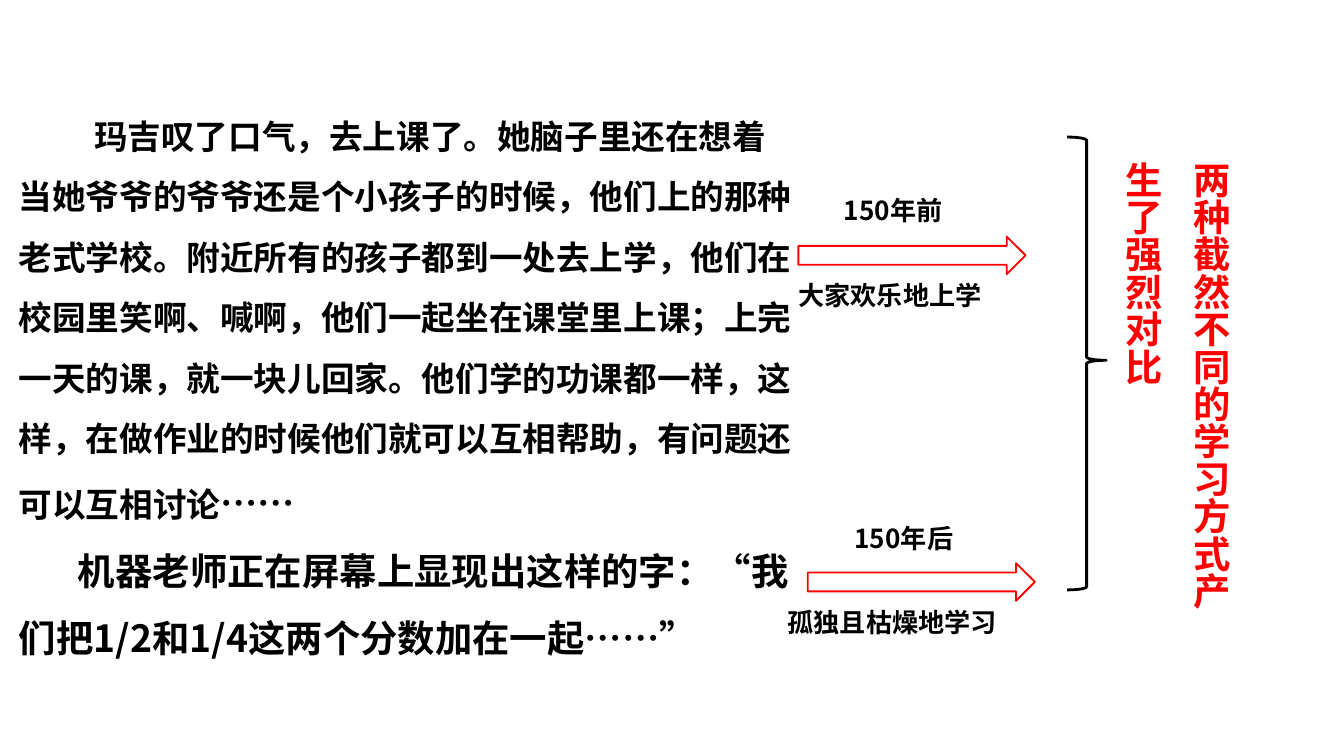
from pptx import Presentation
from pptx.dml.color import RGBColor
from pptx.enum.shapes import MSO_SHAPE
from pptx.enum.text import MSO_AUTO_SIZE
from pptx.util import Inches, Pt
from lxml.etree import SubElement

COLORS = {"ink": "000000", "red": "FF0000", "paper": "FFFFFF"}
FONT = "Noto Sans CJK SC"
NS = "{http://schemas.openxmlformats.org/drawingml/2006/main}"

STORY = (
    "玛吉叹了口气，去上课了。她脑子里还在想着当她爷爷的爷爷还是个小孩子的时候，"
    "他们上的那种老式学校。附近所有的孩子都到一处去上学，他们在校园里笑啊、喊啊，"
    "他们一起坐在课堂里上课；上完一天的课，就一块儿回家。他们学的功课都一样，这样，"
    "在做作业的时候他们就可以互相帮助，有问题还可以互相讨论"
)
SCREEN = "机器老师正在屏幕上显现出这样的字：“我们把1/2和1/4这两个分数加在一起……”"


class Page:
    def __init__(self, deck):
        self.slide = deck.slides.add_slide(deck.slide_layouts[6])

    def color(self, name):
        return RGBColor.from_string(COLORS[name])

    def style(self, par, size, color="ink", lead=None, indent=0):
        font = par.font
        font.name, font.size, font.bold = FONT, Pt(size), True
        font.color.rgb = self.color(color)
        if lead:
            par.line_spacing = lead
        props = par._p.get_or_add_pPr()
        SubElement(props.find(NS + "defRPr"), NS + "ea", typeface=FONT)
        if indent:
            props.set("marL", "0")
            props.set("indent", str(Inches(indent)))

    def box(self, left, top, width, height, wrap=True):
        shape = self.slide.shapes.add_textbox(
            Inches(left), Inches(top), Inches(width), Inches(height))
        frame = shape.text_frame
        frame.word_wrap = wrap
        frame.auto_size = MSO_AUTO_SIZE.SHAPE_TO_FIT_TEXT
        if wrap:
            frame.margin_left = frame.margin_right = Inches(0.07)
            frame.margin_top = frame.margin_bottom = Inches(0.04)
        return frame

    def label(self, text, *place, wrap=True):
        par = self.box(*place, wrap=wrap).paragraphs[0]
        par.text = text
        self.style(par, 14)

    def upright(self, text, *place):
        frame = self.box(*place)
        frame._txBody.bodyPr.set("vert", "eaVert")
        par = frame.paragraphs[0]
        par.text = text
        self.style(par, 20, "red", 1.5)

    def shape(self, kind, left, top, width, height, line, weight, fill=None):
        shape = self.slide.shapes.add_shape(
            kind, Inches(left), Inches(top), Inches(width), Inches(height))
        shape.shadow.inherit = False
        shape.line.color.rgb = self.color(line)
        shape.line.width = Pt(weight)
        if fill:
            shape.fill.solid()
            shape.fill.fore_color.rgb = self.color(fill)
        else:
            shape.fill.background()
        return shape


def main():
    deck = Presentation()
    deck.slide_width = Inches(10)
    deck.slide_height = Inches(10 * 9 / 16)
    page = Page(deck)

    # Story passage
    frame = page.box(0.07, 0.63, 5.94, 4.37)
    frame.margin_top = Inches(0.08)
    first = frame.paragraphs[0]
    first.add_run().text = STORY
    dots = first.add_run()
    dots.text = "……"
    dots.font.size = Pt(20)
    page.style(first, 18, lead=1.5, indent=0.56)
    last = frame.add_paragraph()
    last.text = SCREEN
    page.style(last, 20, lead=1.5, indent=0.44)

    # Brace joining both times
    brace = page.shape(MSO_SHAPE.RIGHT_BRACE, 7.94, 1.02, 0.29, 3.37, "ink", 1.5)
    brace.adjustments[0] = 0.083
    brace.adjustments[1] = 0.493

    # Arrows
    for left, top in ((6.01, 4.19), (5.94, 1.76)):
        page.shape(MSO_SHAPE.RIGHT_ARROW, left, top, 1.69, 0.28, "red", 1, "paper")

    # Ways of learning, below the arrows
    page.label("大家欢乐地上学", 5.87, 2.04, 1.97, 0.38)
    page.label("孤独且枯燥地学习", 5.79, 4.47, 2.2, 0.38)

    # Conclusion
    page.upright("两种截然不同的学习方式产生了强烈对比", 8.25, 1.16, 1.16, 3.47)

    # Times, above the arrows
    page.label("150年前", 6.18, 1.4, 1.1, 0.4, wrap=False)
    page.label("150年后", 6.26, 3.84, 1.09, 0.4, wrap=False)

    deck.save("out.pptx")


if __name__ == "__main__":
    main()
